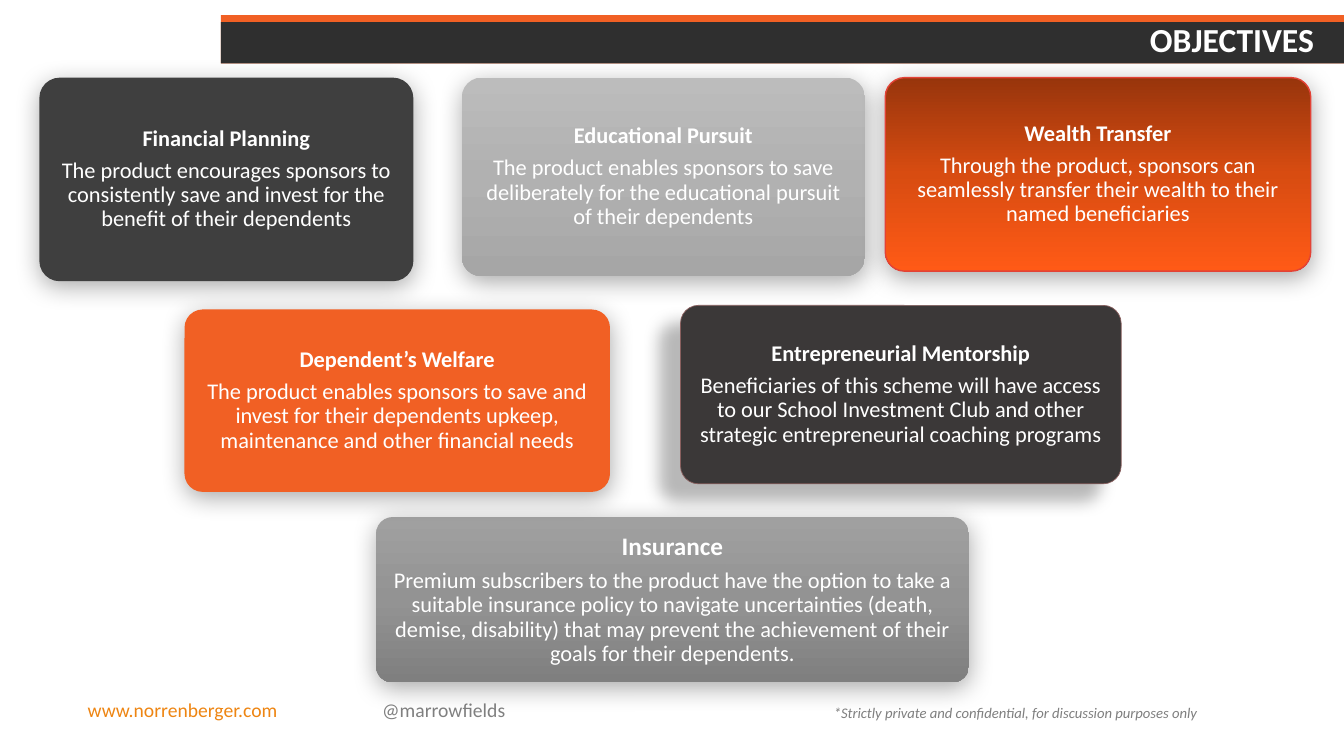
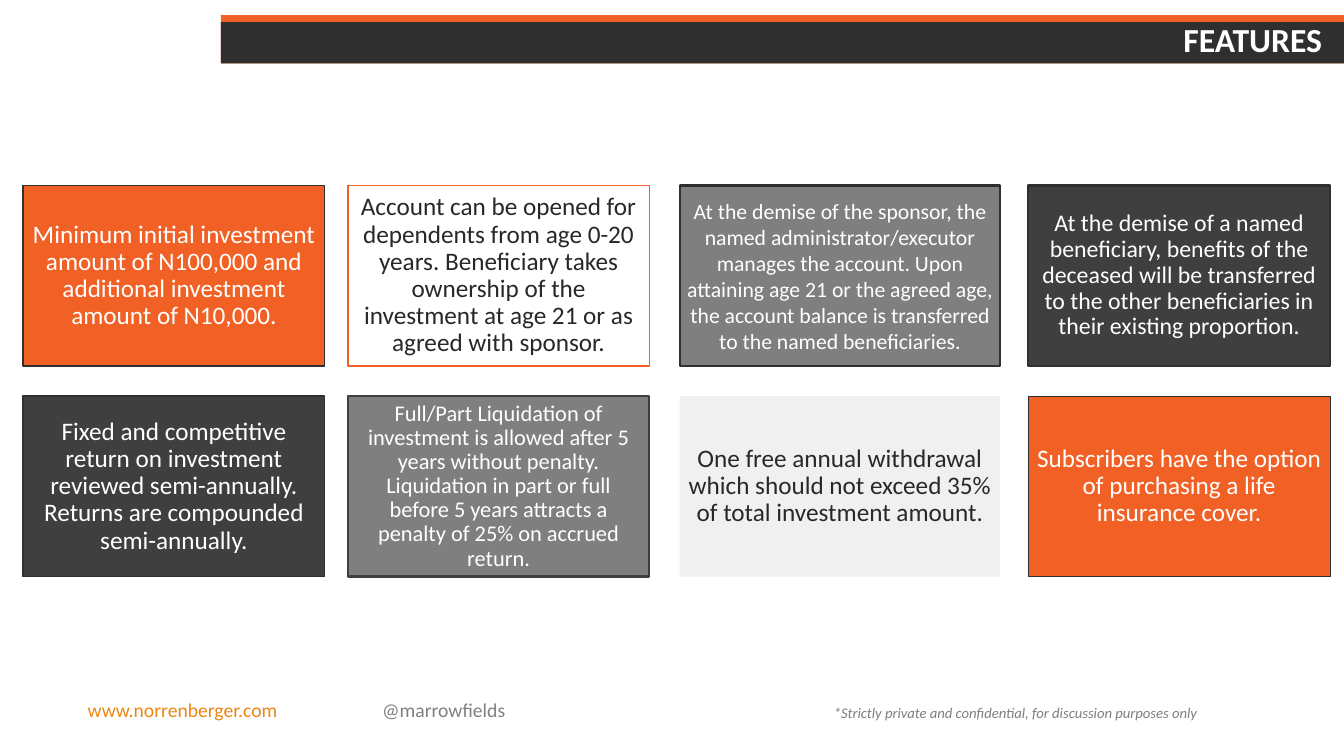
import copy

import pptx
import pptx.dml.color
import pptx.enum.shapes
import pptx.enum.text
import pptx.oxml
import pptx.oxml.ns
import pptx.util
from pptx.util import Inches

FONT = "Calibri"
COLORS = {
    "white": "FFFFFF", "ink": "282828", "pale": "F0F0F0",
    "orange": "F16024", "band": "2F2F2F", "dark": "3F3F3F",
    "warm_dark": "3B3838", "grey": "7F7F7F", "handle": "808080",
    "web": "EE8512", "red_line": "E34236", "brown_line": "895F5E",
}
GRADIENTS = {
    "mid_grey": ("A0A0A0", "939393", "7F7F7F"),
    "light_grey": ("BCBCBC", "B1B1B1", "A6A6A6"),
    "burnt_orange": ("98350C", "D84C11", "FF5A16"),
}
# Shadows: opacity %, blur pt, distance pt, direction degrees
SOFT = (33, 17.8, 4, 87)
CAST = (28, 11.8, 19.7, 141)

ALIGN = pptx.enum.text.PP_ALIGN
ANCHOR = pptx.enum.text.MSO_ANCHOR
SHAPE = pptx.enum.shapes.MSO_SHAPE


def rgb(value):
    return pptx.dml.color.RGBColor.from_string(value)


def write(tf, text, size=16, color="white", bold=False, italic=False,
          align=ALIGN.LEFT, spacing=None, after=0, first=True):
    """Write one paragraph into a text frame."""
    p = tf.paragraphs[0] if first else tf.add_paragraph()
    p.alignment = align
    p.space_after = pptx.util.Pt(after)
    if spacing:
        p.line_spacing = spacing
    r = p.add_run()
    r.text = text
    r.font.name, r.font.size = FONT, pptx.util.Pt(size)
    r.font.bold, r.font.italic = bold, italic
    r.font.color.rgb = rgb(COLORS[color])


def set_frame(tf, inset_x, inset_y, anchor):
    tf.word_wrap = True
    tf.vertical_anchor = anchor
    tf.margin_left = tf.margin_right = Inches(inset_x)
    tf.margin_top = tf.margin_bottom = Inches(inset_y)


def add_text(s, box, text, inset=(0.05, 0.05), anchor=ANCHOR.TOP, **fmt):
    tf = s.shapes.add_textbox(*map(Inches, box)).text_frame
    set_frame(tf, *inset, anchor)
    write(tf, text, **fmt)


def add_gradient(sp, stops):
    """Fill from top to bottom with three evenly spaced stops."""
    sp.fill.gradient()
    sp.fill.gradient_angle = 270
    gs_list = sp._element.spPr.find(".//" + pptx.oxml.ns.qn("a:gsLst"))
    gs_list.insert(1, copy.deepcopy(gs_list[0]))
    for i, (stop, value) in enumerate(zip(sp.fill.gradient_stops, stops)):
        stop.position = i / 2
        stop.color.rgb = rgb(value)


def add_shadow(sp, opacity, blur, dist, angle):
    effects = sp._element.spPr.find(pptx.oxml.ns.qn("a:effectLst"))
    effects.append(pptx.oxml.parse_xml(
        f'<a:outerShdw {pptx.oxml.ns.nsdecls("a")} blurRad="{round(blur * 12700)}" '
        f'dist="{round(dist * 12700)}" dir="{angle * 60000}" algn="ctr" rotWithShape="0">'
        f'<a:srgbClr val="000000"><a:alpha val="{opacity * 1000}"/></a:srgbClr>'
        '</a:outerShdw>'))


def add_box(s, box, fill, line=None, kind=SHAPE.RECTANGLE):
    """Add a shape; line is (colour name, width in points)."""
    sp = s.shapes.add_shape(kind, *map(Inches, box))
    sp.shadow.inherit = False
    if fill in GRADIENTS:
        add_gradient(sp, GRADIENTS[fill])
    else:
        sp.fill.solid()
        sp.fill.fore_color.rgb = rgb(COLORS[fill])
    if line:
        sp.line.color.rgb = rgb(COLORS[line[0]])
        sp.line.width = pptx.util.Pt(line[1])
    else:
        sp.line.fill.background()
    set_frame(sp.text_frame, 0.07, 0.07, ANCHOR.MIDDLE)
    return sp


def add_footer(s):
    add_text(s, (0.82, 6.87, 2.21, 0.34), "www.norrenberger.com", size=14, color="web")
    add_text(s, (3.74, 6.87, 1.38, 0.34), "@marrowfields", size=14, color="handle")
    add_text(s, (8.22, 6.93, 3.8, 0.34),
             "*Strictly private and confidential, for discussion purposes only",
             size=10.5, color="grey", italic=True)


def add_header(s, title, right):
    """Draw the two bands and a title ending at the given right edge."""
    add_box(s, (2.19, 0.15, 11.14, 0.48), "orange")
    add_box(s, (2.19, 0.22, 11.14, 0.41), "band")
    add_text(s, (right - 10.95, 0.19, 10.95, 0.44), title, inset=(0.1, 0.05),
             anchor=ANCHOR.MIDDLE, size=24, bold=True, align=ALIGN.RIGHT, spacing=0.9)


def new_slide(prs, title, title_right):
    s = prs.slides.add_slide(prs.slide_layouts[6])
    add_footer(s)
    add_header(s, title, title_right)
    return s


def add_objective(s, box, heading, body, fill, line=None, shadow=SOFT, size=16):
    """Rounded card with a bold heading above its explanation."""
    sp = add_box(s, box, fill, line, SHAPE.ROUNDED_RECTANGLE)
    sp.adjustments[0] = 0.1
    add_shadow(sp, *shadow)
    fmt = {"align": ALIGN.CENTER, "spacing": 0.9}
    write(sp.text_frame, heading, size=size, bold=True, after=size * 0.35, **fmt)
    write(sp.text_frame, body, after=5.6, first=False, **fmt)


def objectives_slide(prs):
    s = new_slide(prs, "OBJECTIVES", 13.13)
    # Bottom card
    add_objective(s, (3.73, 5.13, 5.88, 1.64), "Insurance",
                  "Premium subscribers to the product have the option to take a suitable "
                  "insurance policy to navigate uncertainties (death, demise, disability) "
                  "that may prevent the achievement of their goals for their dependents.",
                  "mid_grey", size=18)
    # Middle row
    add_objective(s, (1.83, 3.07, 4.22, 1.81), "Dependent’s Welfare",
                  "The product enables sponsors to save and invest for their dependents "
                  "upkeep, maintenance and other financial needs", "orange")
    add_objective(s, (6.75, 3.03, 4.37, 1.77), "Entrepreneurial Mentorship",
                  "Beneficiaries of this scheme will have access to our School Investment "
                  "Club and other strategic entrepreneurial coaching programs",
                  "warm_dark", ("brown_line", 0.5), CAST)
    # Top row
    add_objective(s, (0.39, 0.77, 3.71, 2.02), "Financial Planning",
                  "The product encourages sponsors to consistently save and invest for "
                  "the benefit of their dependents", "dark")
    add_objective(s, (4.58, 0.77, 4, 1.97), "Educational Pursuit",
                  "The product enables sponsors to save deliberately for the educational "
                  "pursuit of their dependents", "light_grey")
    add_objective(s, (8.78, 0.77, 4.22, 1.92), "Wealth Transfer",
                  "Through the product, sponsors can seamlessly transfer their wealth to "
                  "their named beneficiaries", "burnt_orange", ("red_line", 1))


def add_feature(s, box, text, fill, line, size=18, color="white", spacing=0.9):
    sp = add_box(s, box, fill, line)
    write(sp.text_frame, text, size=size, color=color, align=ALIGN.CENTER,
          spacing=spacing, after=size * 0.35)


def features_slide(prs):
    s = new_slide(prs, "FEATURES", 13.21)
    columns = [(0.23, 2.99), (3.45, 2.99), (6.74, 3.18), (10.2, 2.99)]
    rows = [(1.84, 1.79), (3.93, 1.79)]
    # Text, fill, line and text format, row by row
    features = [
        ("Minimum initial investment amount of N100,000 and additional investment "
         "amount of N10,000.", "orange", ("band", 1), {}),
        ("Account can be opened for dependents from age 0-20 years. Beneficiary takes "
         "ownership of the investment at age 21 or as agreed with sponsor.",
         "white", ("orange", 1), {"color": "ink"}),
        ("At the demise of the sponsor, the named administrator/executor manages the "
         "account. Upon attaining age 21 or the agreed age, the account balance is "
         "transferred to the named beneficiaries.",
         "grey", ("band", 1.5), {"size": 15.5, "spacing": 1.0}),
        ("At the demise of a named beneficiary, benefits of the deceased will be "
         "transferred to the other beneficiaries in their existing proportion.",
         "dark", ("band", 1.5), {"size": 17}),
        ("Fixed and competitive return on investment reviewed semi-annually. Returns "
         "are compounded semi-annually.", "dark", ("band", 1), {}),
        ("Full/Part Liquidation of investment is allowed after 5 years without penalty. "
         "Liquidation in part or full before 5 years attracts a penalty of 25% on "
         "accrued return.", "grey", ("dark", 1.5), {"size": 16}),
        ("One free annual withdrawal which should not exceed 35% of total investment "
         "amount.", "pale", None, {"color": "ink"}),
        ("Subscribers have the option of purchasing a life insurance cover.",
         "orange", ("band", 0.5), {}),
    ]
    for i, (text, fill, line, fmt) in enumerate(features):
        row, col = divmod(i, len(columns))
        (left, width), (top, height) = columns[col], rows[row]
        add_feature(s, (left, top, width, height), text, fill, line, **fmt)


def main():
    prs = pptx.Presentation()
    prs.slide_width, prs.slide_height = Inches(13.33), Inches(7.5)
    objectives_slide(prs)
    features_slide(prs)
    prs.save("out.pptx")


if __name__ == "__main__":
    main()
